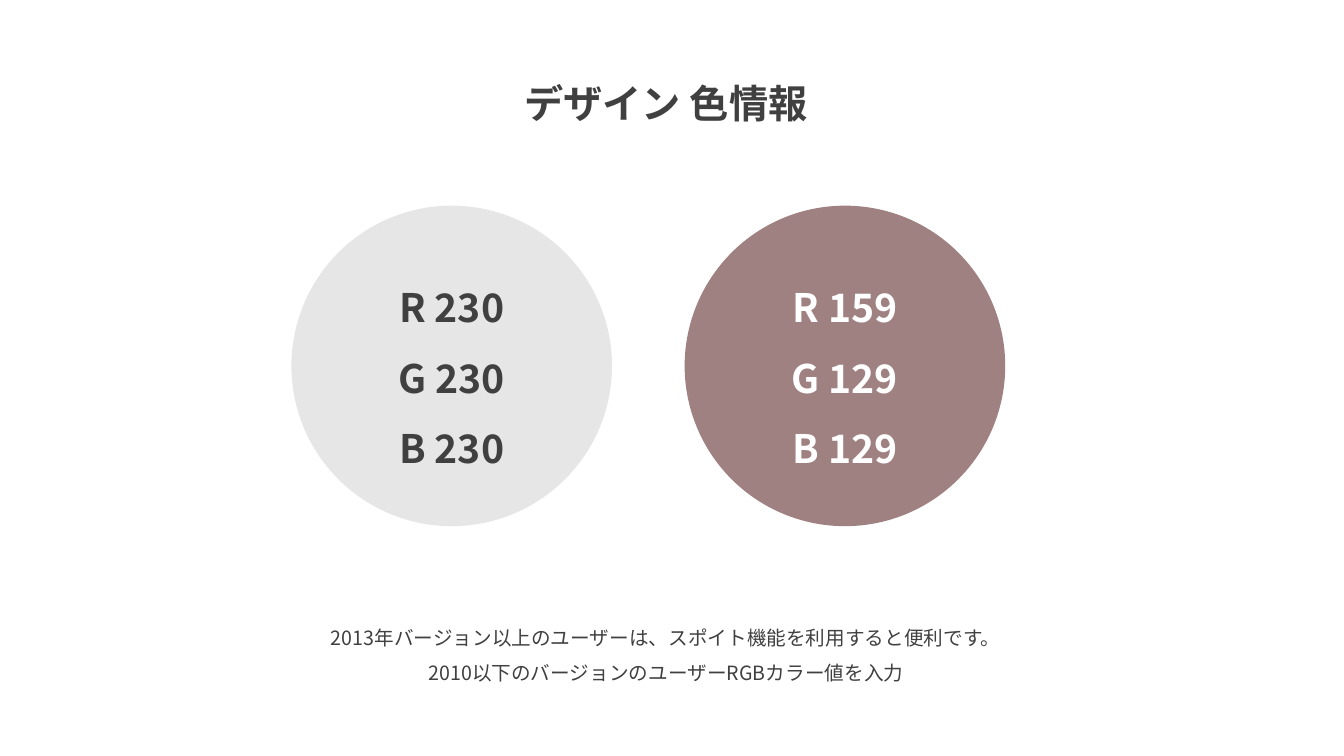
"""Build a slide that lists the RGB values of a two-colour design."""
from lxml import etree
from pptx import Presentation
from pptx.dml.color import RGBColor
from pptx.enum.shapes import MSO_SHAPE
from pptx.enum.text import MSO_ANCHOR, MSO_AUTO_SIZE, PP_ALIGN
from pptx.oxml.ns import qn
from pptx.util import Inches, Pt

OVAL = MSO_SHAPE.OVAL
TOP, MIDDLE = MSO_ANCHOR.TOP, MSO_ANCHOR.MIDDLE
GROW, FIXED = MSO_AUTO_SIZE.SHAPE_TO_FIT_TEXT, MSO_AUTO_SIZE.NONE
CENTER = PP_ALIGN.CENTER

FONT = "Noto Sans CJK KR"
COLORS = {"ink": "404040", "white": "FFFFFF", "gray": "E6E6E6", "rose": "9F8181"}
TITLE = "デザイン 色情報"
SWATCHES = [
    ("gray", "ink", (230, 230, 230)),
    ("rose", "white", (159, 129, 129)),
]
NOTES = [
    "2013年バージョン以上のユーザーは、スポイト機能を利用すると便利です。",
    "2010以下のバージョンのユーザーRGBカラー値を入力",
]

WIDE, HIGH = 13.33, 7.5
SIZE, STEP = 3.18, 3.9
LEFT, ROW = 2.89, 2.04
HEAD = (4.29, 0.5, 4.63, 0.74)
FOOT = (2.61, 6.04, 7.99, 0.77)


def color(name):
    return RGBColor.from_string(COLORS[name])


def write(shape, lines, size, ink, bold, anchor, fit):
    frame = shape.text_frame
    frame.word_wrap = True
    frame.auto_size = fit
    frame.vertical_anchor = anchor
    for i, line in enumerate(lines):
        para = frame.add_paragraph() if i else frame.paragraphs[0]
        para.alignment = CENTER
        para.line_spacing = 1.5
        run = para.add_run()
        run.text = line
        font = run.font
        font.name, font.size, font.bold = FONT, Pt(size), bold
        font.color.rgb = color(ink)
        east = etree.SubElement(run._r.get_or_add_rPr(), qn("a:ea"))
        east.set("typeface", FONT)


def main():
    deck = Presentation()
    deck.slide_width, deck.slide_height = Inches(WIDE), Inches(HIGH)
    slide = deck.slides.add_slide(deck.slide_layouts[5])

    for i, (fill, ink, values) in enumerate(SWATCHES):
        box = (LEFT + i * STEP, ROW, SIZE, SIZE)
        disc = slide.shapes.add_shape(OVAL, *map(Inches, box))
        disc.shadow.inherit = False
        disc.fill.solid()
        disc.fill.fore_color.rgb = color(fill)
        disc.line.fill.background()
        lines = [f"{key} {val}" for key, val in zip("RGB", values)]
        write(disc, lines, 28, ink, True, MIDDLE, FIXED)

    title = slide.shapes.title
    title.left, title.top, title.width, title.height = map(Inches, HEAD)
    write(title, [TITLE], 28, "ink", True, TOP, GROW)

    foot = slide.shapes.add_textbox(*map(Inches, FOOT))
    write(foot, NOTES, 14, "ink", False, TOP, GROW)
    deck.save("out.pptx")


if __name__ == "__main__":
    main()
